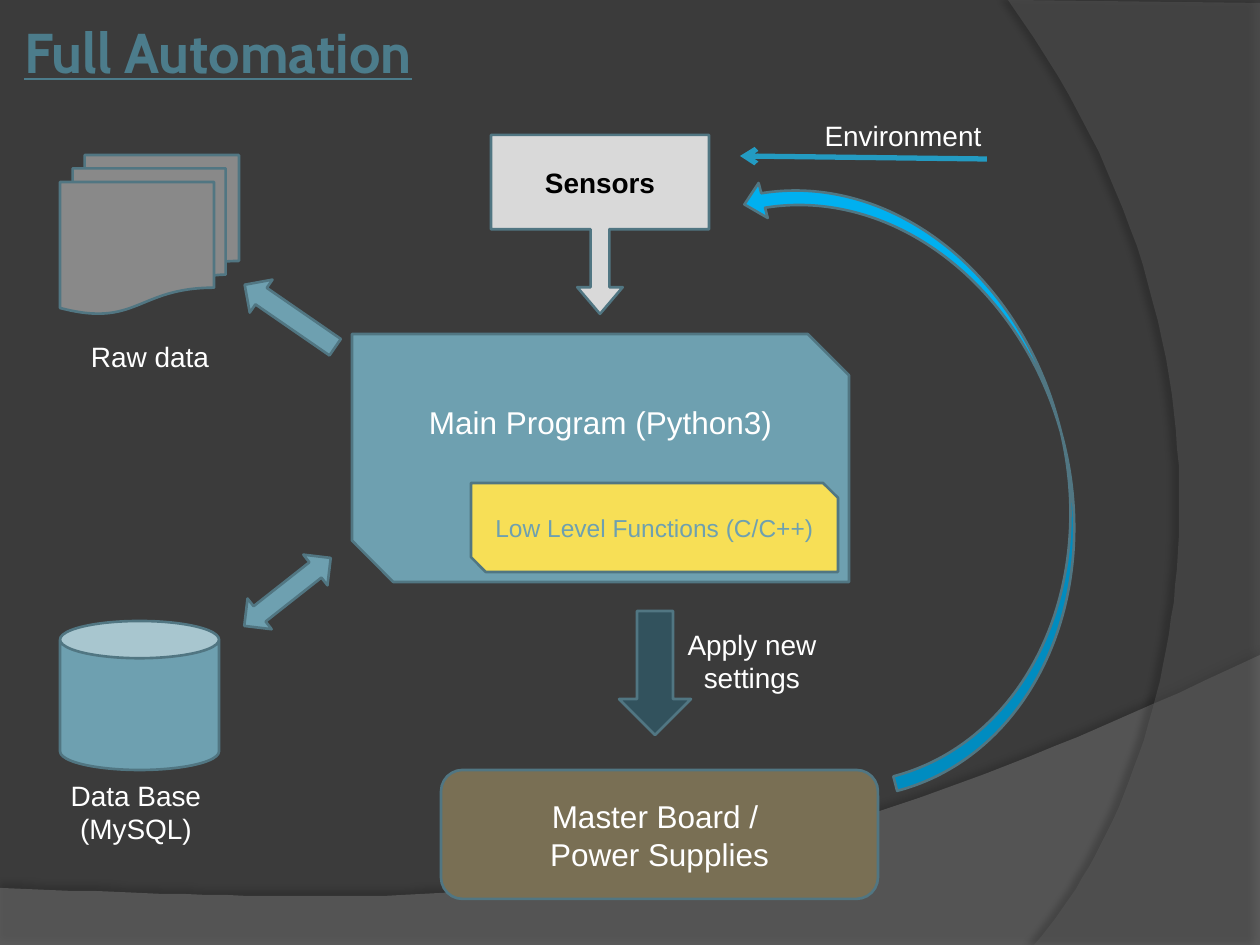
from lxml import etree
from pptx import Presentation
from pptx.dml.color import RGBColor
from pptx.enum.shapes import MSO_CONNECTOR, MSO_SHAPE
from pptx.enum.text import MSO_ANCHOR, PP_ALIGN
from pptx.oxml.ns import qn
from pptx.util import Emu, Pt

LEFT, CENTER = PP_ALIGN.LEFT, PP_ALIGN.CENTER
TOP, MIDDLE = MSO_ANCHOR.TOP, MSO_ANCHOR.MIDDLE
SCALE = 914400 / 126
CURVE_STEPS = 60
TITLE_ONLY = 5

COLORS = {
    "background": "3B3B3B", "wave": "7F7F7F", "arc": "5E5E5E", "shadow": "000000",
    "title": "4C7C8B", "outline": "517682", "teal": "6EA0B0", "yellow": "F7DF56",
    "light": "D9D9D9", "gray": "898989", "dark teal": "32525D", "brown": "796F54",
    "cyan": "00B0F0", "arrow": "239BC2", "white": "FFFFFF", "black": "000000",
}

BACKDROPS = [
    {"corners": [(0, 946), (1260, 946), (1260, 655)],
     "curve": [(1260, 655), (704, 919), (493, 906), (0, 888)],
     "color": "wave", "opacity": 45, "shadow_opacity": 35, "distance": 3.5, "direction": 270},
    {"corners": [(1260, 3), (1260, 945), (1034, 945)],
     "curve": [(1034, 945), (1178, 780), (1283, 378), (1008, 0)],
     "color": "arc", "opacity": 40, "shadow_opacity": 45, "distance": 4, "direction": 180},
]

TITLE = ("Full Automation", (18, 6, 1029, 90))

SHAPES = [
    {"kind": MSO_SHAPE.SNIP_2_DIAG_RECTANGLE, "box": (352, 334, 497, 248), "fill": "teal",
     "lines": ["Main Program (Python3)"], "format": {"size": 18, "bottom": 79}},
    {"kind": MSO_SHAPE.SNIP_2_DIAG_RECTANGLE, "box": (471, 483, 367, 89), "fill": "yellow",
     "lines": ["Low Level Functions (C/C++)"], "format": {"size": 14, "color": "teal"}},
    {"kind": MSO_SHAPE.CAN, "box": (60, 621, 159, 149), "fill": "teal"},
    {"kind": MSO_SHAPE.UP_DOWN_ARROW, "box": (268, 537, 39, 110), "fill": "teal",
     "rotation": 51.8},
    {"kind": MSO_SHAPE.DOWN_ARROW_CALLOUT, "box": (491, 135, 218, 179), "fill": "light",
     "adjustments": [0.104, 0.127, 0.149, 0.527],
     "lines": ["Sensors"], "format": {"color": "black", "bold": True}},
    {"kind": MSO_SHAPE.FLOWCHART_MULTIDOCUMENT, "box": (60, 155, 179, 159), "fill": "gray"},
    {"kind": MSO_SHAPE.UP_ARROW, "box": (270, 261, 40, 110), "fill": "teal",
     "rotation": 304.6},
    {"kind": MSO_SHAPE.UP_ARROW, "box": (619, 611, 72, 124), "fill": "dark teal",
     "rotation": 180},
    {"kind": MSO_SHAPE.ROUNDED_RECTANGLE, "box": (441, 770, 437, 129), "fill": "brown",
     "lines": ["Master Board / ", "Power Supplies"], "format": {"size": 18}},
    {"kind": MSO_SHAPE.CURVED_UP_ARROW, "box": (627, 333, 624, 249), "fill": "cyan",
     "rotation": 255.4, "adjustments": [0.06, 0.145, 0.077]},
]

LABELS = [
    ("Data Base (MySQL)", (53, 772, 166, 81)),
    ("Raw data", (67, 333, 166, 47)),
    ("Apply new settings", (669, 621, 166, 81)),
    ("Environment", (799, 112, 208, 47)),
]

ENVIRONMENT_ARROW = [(987, 159), (740, 156)]


def px(value):
    return Emu(round(value * SCALE))


def rgb(name):
    return RGBColor.from_string(COLORS[name])


def write_text(shape, lines, size=16, color="white", font="Arial", bold=False,
               underline=False, align=CENTER, anchor=MIDDLE, bottom=6):
    frame = shape.text_frame
    frame.word_wrap = True
    frame.vertical_anchor = anchor
    frame.margin_bottom = px(bottom)
    for index, line in enumerate(lines):
        paragraph = frame.add_paragraph() if index else frame.paragraphs[0]
        paragraph.alignment = align
        run = paragraph.add_run()
        run.text = line
        run.font.name = font
        run.font.size = Pt(size)
        run.font.bold = bold
        run.font.underline = underline
        run.font.color.rgb = rgb(color)


def bezier(points, steps):
    for step in range(1, steps + 1):
        t = step / steps
        weights = ((1 - t) ** 3, 3 * t * (1 - t) ** 2, 3 * t * t * (1 - t), t ** 3)
        yield tuple(sum(w * point[axis] for w, point in zip(weights, points))
                    for axis in (0, 1))


def add_alpha(color_element, percent):
    etree.SubElement(color_element, qn("a:alpha"), val=str(percent * 1000))


def add_backdrop(slide, backdrop):
    start, *corners = backdrop["corners"]
    builder = slide.shapes.build_freeform(*start, scale=SCALE)
    builder.add_line_segments(corners + list(bezier(backdrop["curve"], CURVE_STEPS)))
    shape = builder.convert_to_shape()
    shape.fill.solid()
    shape.fill.fore_color.rgb = rgb(backdrop["color"])
    shape.line.fill.background()
    shape.shadow.inherit = False
    properties = shape.element.spPr
    add_alpha(properties.find(qn("a:solidFill")).find(qn("a:srgbClr")), backdrop["opacity"])
    shadow = etree.SubElement(
        properties.find(qn("a:effectLst")), qn("a:outerShdw"), blurRad=str(Pt(4)),
        dist=str(Pt(backdrop["distance"])), dir=str(backdrop["direction"] * 60000))
    add_alpha(etree.SubElement(shadow, qn("a:srgbClr"), val=COLORS["shadow"]),
              backdrop["shadow_opacity"])
    slide.shapes.title.element.addprevious(shape.element)


def add_title(slide, text, box):
    title = slide.shapes.title
    title.left, title.top, title.width, title.height = map(px, box)
    frame = title.text_frame
    frame.margin_left = frame.margin_right = frame.margin_top = px(6)
    write_text(title, [text], size=32, color="title", font="Cabin", bold=True,
               underline=True, align=LEFT)


def add_diagram_shape(slide, item):
    shape = slide.shapes.add_shape(item["kind"], *map(px, item["box"]))
    shape.rotation = item.get("rotation", 0)
    for index, value in enumerate(item.get("adjustments", [])):
        shape.adjustments[index] = value
    shape.shadow.inherit = False
    shape.fill.solid()
    shape.fill.fore_color.rgb = rgb(item["fill"])
    shape.line.color.rgb = rgb("outline")
    shape.line.width = Pt(1.5)
    if "lines" in item:
        write_text(shape, item["lines"], **item["format"])


def add_arrow(slide, start, end):
    arrow = slide.shapes.add_connector(MSO_CONNECTOR.STRAIGHT, *map(px, start + end))
    arrow.line.color.rgb = rgb("arrow")
    arrow.line.width = Pt(3)
    etree.SubElement(arrow.line._get_or_add_ln(), qn("a:tailEnd"), type="arrow")
    etree.SubElement(arrow.element.spPr, qn("a:effectLst"))


def main():
    presentation = Presentation()
    presentation.slide_width, presentation.slide_height = px(1260), px(945)
    slide = presentation.slides.add_slide(presentation.slide_layouts[TITLE_ONLY])
    slide.background.fill.solid()
    slide.background.fill.fore_color.rgb = rgb("background")
    for backdrop in BACKDROPS:
        add_backdrop(slide, backdrop)
    add_title(slide, *TITLE)
    for item in SHAPES:
        add_diagram_shape(slide, item)
    add_arrow(slide, *ENVIRONMENT_ARROW)
    for text, box in LABELS:
        write_text(slide.shapes.add_textbox(*map(px, box)), [text], anchor=TOP)
    presentation.save("out.pptx")


if __name__ == "__main__":
    main()
